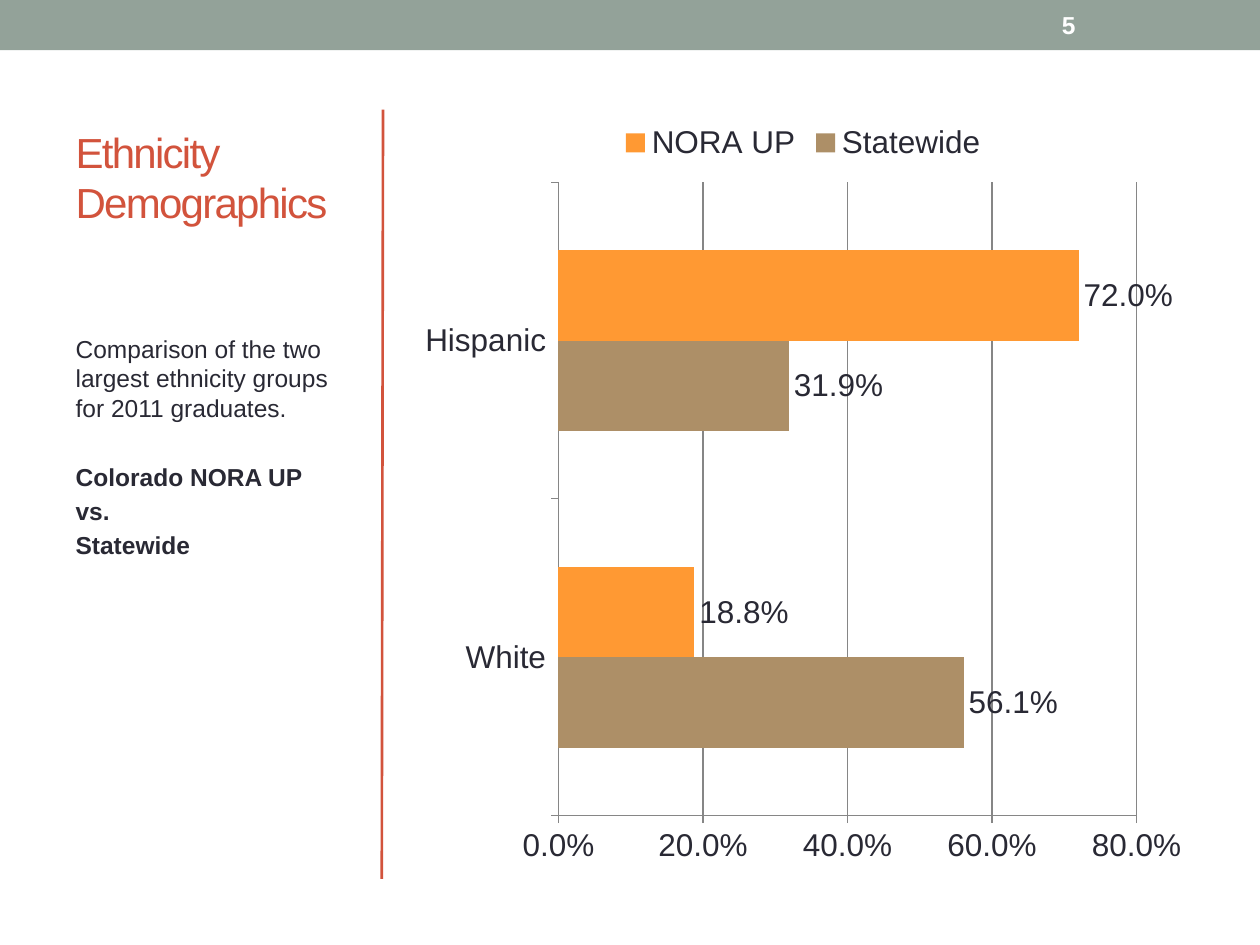
from lxml.etree import SubElement
from pptx import Presentation
from pptx.chart.data import CategoryChartData
from pptx.dml.color import RGBColor
from pptx.enum.chart import XL_CHART_TYPE, XL_LABEL_POSITION, XL_LEGEND_POSITION, XL_TICK_MARK
from pptx.enum.shapes import MSO_CONNECTOR, MSO_SHAPE
from pptx.enum.text import MSO_ANCHOR, MSO_AUTO_SIZE, PP_ALIGN
from pptx.oxml.ns import qn
from pptx.util import Inches, Pt

SAGE = RGBColor(0x93, 0xA2, 0x99)
RED = RGBColor(0xD2, 0x53, 0x3C)
INK = RGBColor(0x29, 0x29, 0x34)
TAN = RGBColor(0xAD, 0x8F, 0x67)
ORANGE = RGBColor(0xFF, 0x99, 0x33)
GRAY = RGBColor(0x86, 0x86, 0x86)
WHITE = RGBColor(0xFF, 0xFF, 0xFF)
FONT = "Arial"
PERCENT = "0.0%"
PROGRAM = "NORA UP"

W, H = Inches(10), Inches(7.5)
MARGIN = W * 0.05
TOP, BOTTOM = H * 0.116, H * 0.93
SIDE_W = W * 0.234
CHART_X = W * 0.325


def style(font, size, color, bold=False):
    font.name, font.size, font.bold = FONT, Pt(size), bold
    font.color.rgb = color


def place(shape, box):
    shape.left, shape.top, shape.width, shape.height = (int(v) for v in box)


def add_band(s, box, number):
    x, y, w, h = (int(v) for v in box)
    band = s.shapes.add_shape(MSO_SHAPE.RECTANGLE, x, y, w, h)
    band.shadow.inherit = False
    band.fill.solid()
    band.fill.fore_color.rgb = SAGE
    band.line.fill.background()
    tb = s.shapes.add_textbox(int(x + w * 0.833), int(y + h * 0.05), int(w * 0.117), int(h * 0.9))
    tf = tb.text_frame
    tf.word_wrap = True
    tf.vertical_anchor = MSO_ANCHOR.MIDDLE
    tf.text = number
    style(tf.paragraphs[0].runs[0].font, 14, WHITE, True)


def add_divider(s, box):
    x, y, w, h = (int(v) for v in box)
    line = s.shapes.add_connector(MSO_CONNECTOR.STRAIGHT, x + w, y, x, y + h)
    line.line.color.rgb = RED
    line.line.width = Pt(1.5)
    SubElement(line._element.spPr, qn("a:effectLst"))


def fill_placeholder(shape, box, paragraphs, size, color, leading):
    """Fill a placeholder from (text, bold, points before) paragraphs."""
    place(shape, box)
    tf = shape.text_frame
    tf.word_wrap = True
    tf.auto_size = MSO_AUTO_SIZE.NONE
    for i, (text, bold, before) in enumerate(paragraphs):
        p = tf.add_paragraph() if i else tf.paragraphs[0]
        p.text = text
        p.alignment = PP_ALIGN.LEFT
        p.line_spacing, p.space_before, p.space_after = Pt(leading), Pt(before), Pt(0)
        for r in p.runs:
            style(r.font, size, color, bold)
    return tf


def add_sidebar(s, box):
    x, y, w, h = box
    title, body = s.shapes.title, s.placeholders[2]
    title_h = h * 0.226
    tf = fill_placeholder(title, (x, y, w, title_h),
                          [("Ethnicity\vDemographics", False, 0)], 24, RED, 28.6)
    tf.vertical_anchor = MSO_ANCHOR.BOTTOM
    tf.margin_bottom = Inches(0.45)
    for r in tf.paragraphs[0].runs:
        r.font._element.set("spc", "-100")

    body_y = h * 0.239
    tf = fill_placeholder(body, (x, y + body_y, w, h - body_y), [
        ("Comparison of the two largest ethnicity groups for 2011 graduates.", False, 0),
        (f"Colorado {PROGRAM}", True, 22.6),
        ("vs.", True, 2.8),
        ("Statewide", True, 2.8),
    ], 14, INK, 16.8)
    tf.vertical_anchor = MSO_ANCHOR.TOP
    tf.margin_top = Inches(0.32)


def add_ethnicity_chart(s, box):
    data = CategoryChartData(number_format=PERCENT)
    data.categories = ["White", "Hispanic"]
    data.add_series("Statewide", (0.561, 0.319))
    data.add_series(PROGRAM, (0.188, 0.72))
    chart = s.shapes.add_chart(XL_CHART_TYPE.BAR_CLUSTERED, *(int(v) for v in box), data).chart
    style(chart.font, 18, INK)
    chart.has_title = False
    chart.has_legend = True
    chart.legend.position = XL_LEGEND_POSITION.TOP
    chart.legend.include_in_layout = False

    plot = chart.plots[0]
    plot.gap_width = 150
    plot.vary_by_categories = False
    for series, color in zip(plot.series, (TAN, ORANGE)):
        series.format.fill.solid()
        series.format.fill.fore_color.rgb = color
        labels = series.data_labels
        labels.show_value = True
        labels.position = XL_LABEL_POSITION.OUTSIDE_END
        labels.number_format, labels.number_format_is_linked = PERCENT, False

    values = chart.value_axis
    values.minimum_scale, values.maximum_scale, values.major_unit = 0, 0.8, 0.2
    values.tick_labels.number_format = PERCENT
    values.tick_labels.number_format_is_linked = False
    values.has_major_gridlines = True
    values.major_gridlines.format.line.color.rgb = GRAY
    for axis in (values, chart.category_axis):
        axis.major_tick_mark = XL_TICK_MARK.OUTSIDE
        axis.format.line.color.rgb = GRAY


def main():
    prs = Presentation()
    prs.slide_width, prs.slide_height = W, H
    s = prs.slides.add_slide(prs.slide_layouts.get_by_name("Content with Caption"))
    content = s.placeholders[1]._element
    content.getparent().remove(content)
    height = BOTTOM - TOP
    add_band(s, (0, 0, W, H * 0.053), "5")
    add_divider(s, (W * 0.303, TOP, W * 0.001, height))
    add_sidebar(s, (MARGIN, TOP, SIDE_W, height))
    add_ethnicity_chart(s, (CHART_X, TOP, W - MARGIN - CHART_X, height))
    prs.save("out.pptx")


if __name__ == "__main__":
    main()
